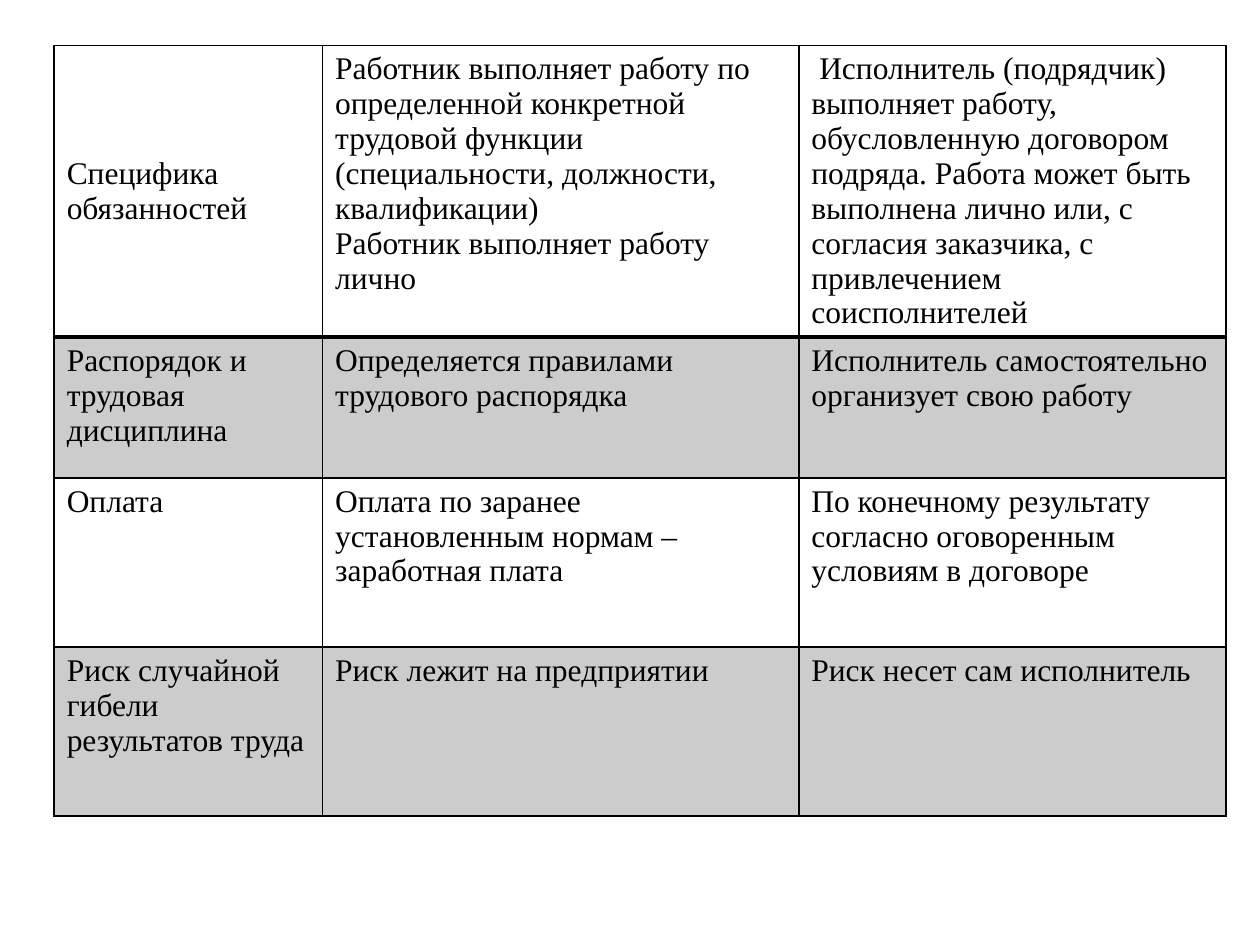
from lxml import etree
from pptx import Presentation
from pptx import util as u
from pptx.dml.color import RGBColor
from pptx.enum import text
from pptx.oxml import ns

BLACK = RGBColor(0, 0, 0)
FONT = "Times New Roman"
COLUMNS = (0.213, 0.378, 0.339)
ROWS = (0.308, 0.149, 0.179, 0.179)
TERMS = (
    ("Специфика обязанностей",
     "Работник выполняет работу по определенной конкретной трудовой функции "
     "(специальности, должности, квалификации)\nРаботник выполняет работу лично",
     " Исполнитель (подрядчик) выполняет работу, обусловленную договором подряда. "
     "Работа может быть выполнена лично или, с согласия заказчика, "
     "с привлечением соисполнителей"),
    ("Распорядок и трудовая дисциплина",
     "Определяется правилами трудового распорядка",
     "Исполнитель самостоятельно организует свою работу"),
    ("Оплата",
     "Оплата по заранее установленным нормам – заработная плата",
     "По конечному результату согласно оговоренным условиям в договоре"),
    ("Риск случайной гибели результатов труда",
     "Риск лежит на предприятии",
     "Риск несет сам исполнитель"),
)


class Page:
    """Holds the text style and the current slide, with lengths as slide shares."""

    def __init__(self, deck, font, size, color):
        self.deck, self.font, self.size, self.color = deck, font, size, color
        self.slide = deck.slides.add_slide(deck.slide_layouts[6])

    def across(self, share):
        return u.Emu(round(self.deck.slide_width * share))

    def down(self, share):
        return u.Emu(round(self.deck.slide_height * share))

    def table(self, left, top, columns, rows, content):
        frame = self.slide.shapes.add_table(
            len(rows), len(columns), self.across(left), self.down(top),
            self.across(sum(columns)), self.down(sum(rows)))
        table = frame.table
        table.first_row = table.horz_banding = False
        for column, share in zip(table.columns, columns):
            column.width = self.across(share)
        for index, (row, share) in enumerate(zip(table.rows, rows)):
            row.height = self.down(share)
            for cell, wording in zip(row.cells, content[index]):
                self.label(cell, wording)
                self.shade(cell, index % 2 == 1)
                self.border(cell, top=2 if index == 1 else 1,
                            bottom=2 if index == 0 else 1)
        return table

    def label(self, cell, wording):
        cell.text_frame.text = wording
        for para in cell.text_frame.paragraphs:
            para.font.name = self.font
            para.font.size = u.Pt(self.size)
            para.font.color.rgb = self.color

    def shade(self, cell, shaded):
        if not shaded:
            cell.fill.background()
            return
        cell.fill.solid()
        cell.fill.fore_color.rgb = self.color
        tint = next(cell._tc.tcPr.iter(ns.qn("a:srgbClr")))
        etree.SubElement(tint, ns.qn("a:alpha"), val="20000")

    def border(self, cell, top, bottom):
        widths = {"L": 1, "R": 1, "T": top, "B": bottom}
        for place, (side, width) in enumerate(widths.items()):
            line = etree.Element(ns.qn(f"a:ln{side}"), w=str(u.Pt(width)))
            fill = etree.SubElement(line, ns.qn("a:solidFill"))
            etree.SubElement(fill, ns.qn("a:srgbClr"), val=str(self.color))
            cell._tc.tcPr.insert(place, line)


def main():
    deck = Presentation()
    deck.slide_width, deck.slide_height = u.Inches(10), u.Inches(7.5)
    page = Page(deck, FONT, 18, BLACK)
    table = page.table(0.043, 0.048, COLUMNS, ROWS, TERMS)
    table.cell(0, 0).vertical_anchor = text.MSO_ANCHOR.MIDDLE
    deck.save("out.pptx")


if __name__ == "__main__":
    main()
